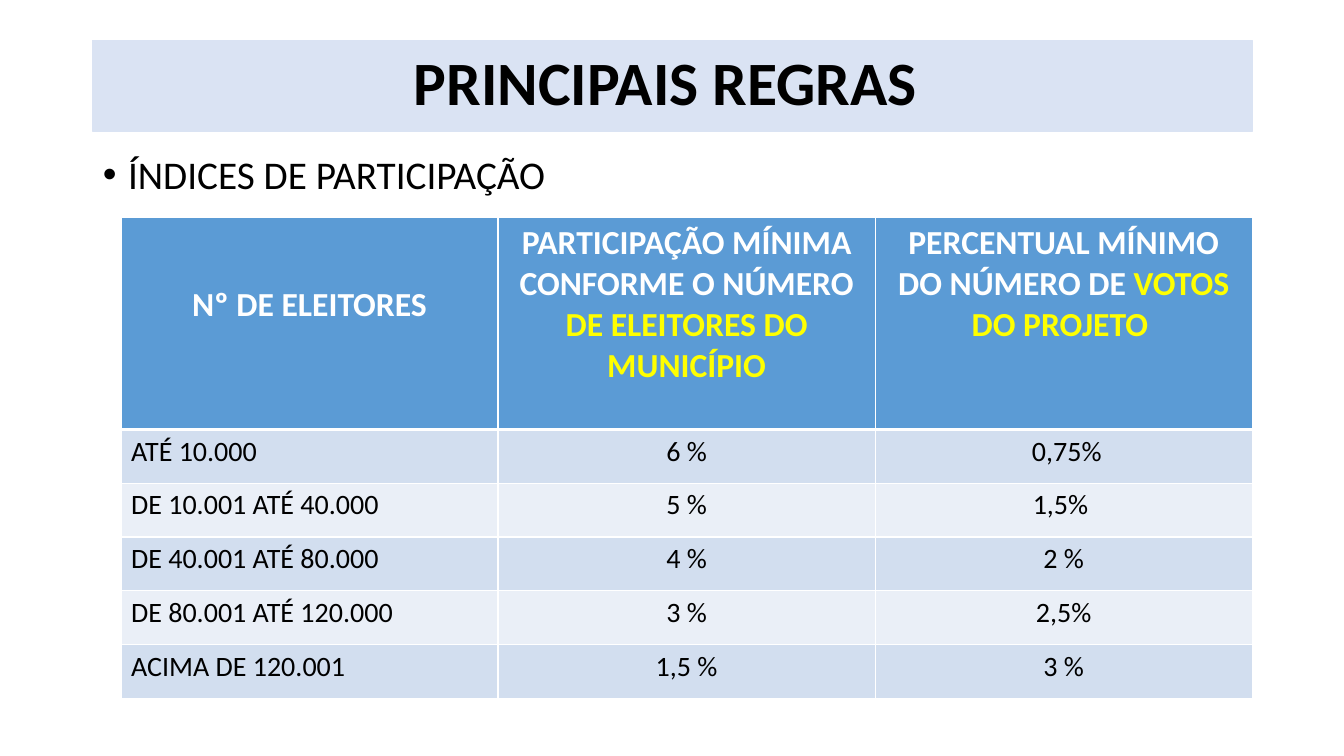
from lxml import etree
from pptx import Presentation
from pptx.dml.color import RGBColor
from pptx.enum import text as t
from pptx.oxml import ns
from pptx.util import Inches, Pt

TITLE = "PRINCIPAIS REGRAS "
TOPIC = "ÍNDICES DE PARTICIPAÇÃO"
# Each heading: white words, then yellow words
HEADS = [
    ("Nº DE ELEITORES", ""),
    ("PARTICIPAÇÃO MÍNIMA CONFORME O NÚMERO ", "DE ELEITORES DO MUNICÍPIO"),
    ("PERCENTUAL MÍNIMO DO NÚMERO DE ", "VOTOS DO PROJETO "),
]
ROWS = [
    ("ATÉ 10.000", "6 %", " 0,75%"),
    ("DE 10.001 ATÉ 40.000", "5 %", "1,5% "),
    ("DE 40.001 ATÉ 80.000", "4 %", "2 %"),
    ("DE 80.001 ATÉ 120.000", "3 %", "2,5%"),
    ("ACIMA DE 120.001", "1,5 %", "3 %"),
]
COLORS = {
    "black": "000000", "white": "FFFFFF", "yellow": "FFFF00",
    "banner": "DAE3F3", "head": "5B9BD5", "odd": "D2DEEF", "even": "EAEFF7",
}
HEAD_H, ROW_H, COL_W = 2.1, 0.534, 3.74
CENTER, LEFT = t.PP_ALIGN.CENTER, t.PP_ALIGN.LEFT


def rgb(name):
    return RGBColor.from_string(COLORS[name])


def place(shape, *box):
    for side, size in zip(("left", "top", "width", "height"), box):
        setattr(shape, side, Inches(size))


def write(para, words, size, color="black", bold=False, align=LEFT):
    para.alignment = align
    run = para.add_run()
    run.text = words
    form = {"name": "Calibri", "size": Pt(size), "bold": bold}
    for key, value in form.items():
        setattr(run.font, key, value)
    run.font.color.rgb = rgb(color)


def paint(cell, fill, base=1):
    """Give a cell its white borders and its fill; base is the bottom width."""
    props = cell._tc.get_or_add_tcPr()
    for tag, width in (("lnL", 1), ("lnR", 1), ("lnT", 1), ("lnB", base)):
        line = etree.SubElement(props, ns.qn("a:" + tag), w=str(Pt(width)))
        solid = etree.SubElement(line, ns.qn("a:solidFill"))
        etree.SubElement(solid, ns.qn("a:srgbClr"), val=COLORS["white"])
    cell.fill.solid()
    cell.fill.fore_color.rgb = rgb(fill)


def add_title(slide):
    title = slide.shapes.title
    place(title, 0.92, 0.4, 11.5, 0.9)
    title.fill.solid()
    title.fill.fore_color.rgb = title.line.color.rgb = rgb("banner")
    title.line.width = Pt(0.75)
    frame = title.text_frame
    frame.auto_size = t.MSO_AUTO_SIZE.NONE
    frame.vertical_anchor = t.MSO_ANCHOR.MIDDLE
    para = frame.paragraphs[0]
    para.line_spacing = 0.9
    write(para, TITLE, 44, bold=True, align=CENTER)


def add_topic(slide):
    body = slide.placeholders[1]
    place(body, 0.92, 1.49, 12.2, 5.77)
    body.text_frame.auto_size = t.MSO_AUTO_SIZE.NONE
    para = body.text_frame.paragraphs[0]
    props = para._p.get_or_add_pPr()
    props.set("marL", str(Inches(0.25)))
    props.set("indent", str(Inches(-0.25)))
    etree.SubElement(props, ns.qn("a:buFont"), typeface="Arial")
    etree.SubElement(props, ns.qn("a:buChar"), char="•")
    para.line_spacing = 0.9
    para.space_before = Pt(0)
    write(para, TOPIC, 28)


def add_rules(slide):
    high = HEAD_H + ROW_H * len(ROWS)
    box = (1.2, 2.16, COL_W * len(HEADS), high)
    table = slide.shapes.add_table(
        len(ROWS) + 1, len(HEADS), *map(Inches, box)).table
    for col in table.columns:
        col.width = Inches(COL_W)
    for i, row in enumerate(table.rows):
        row.height = Inches(ROW_H if i else HEAD_H)

    for c, (plain, marked) in enumerate(HEADS):
        cell = table.cell(0, c)
        paint(cell, "head", 3)
        para = cell.text_frame.paragraphs[0]
        write(para, plain, 24, "white", True, CENTER)
        if marked:
            write(para, marked, 24, "yellow", True, CENTER)
    table.cell(0, 0).margin_top = Inches(0.66)

    for r, row in enumerate(ROWS, 1):
        for c, words in enumerate(row):
            cell = table.cell(r, c)
            paint(cell, "odd" if r % 2 else "even")
            write(cell.text_frame.paragraphs[0], words, 20,
                  align=CENTER if c else LEFT)


def main():
    deck = Presentation()
    deck.slide_width, deck.slide_height = Inches(13.33), Inches(7.5)
    slide = deck.slides.add_slide(deck.slide_layouts[1])
    add_title(slide)
    add_topic(slide)
    add_rules(slide)
    deck.save("out.pptx")


if __name__ == "__main__":
    main()
